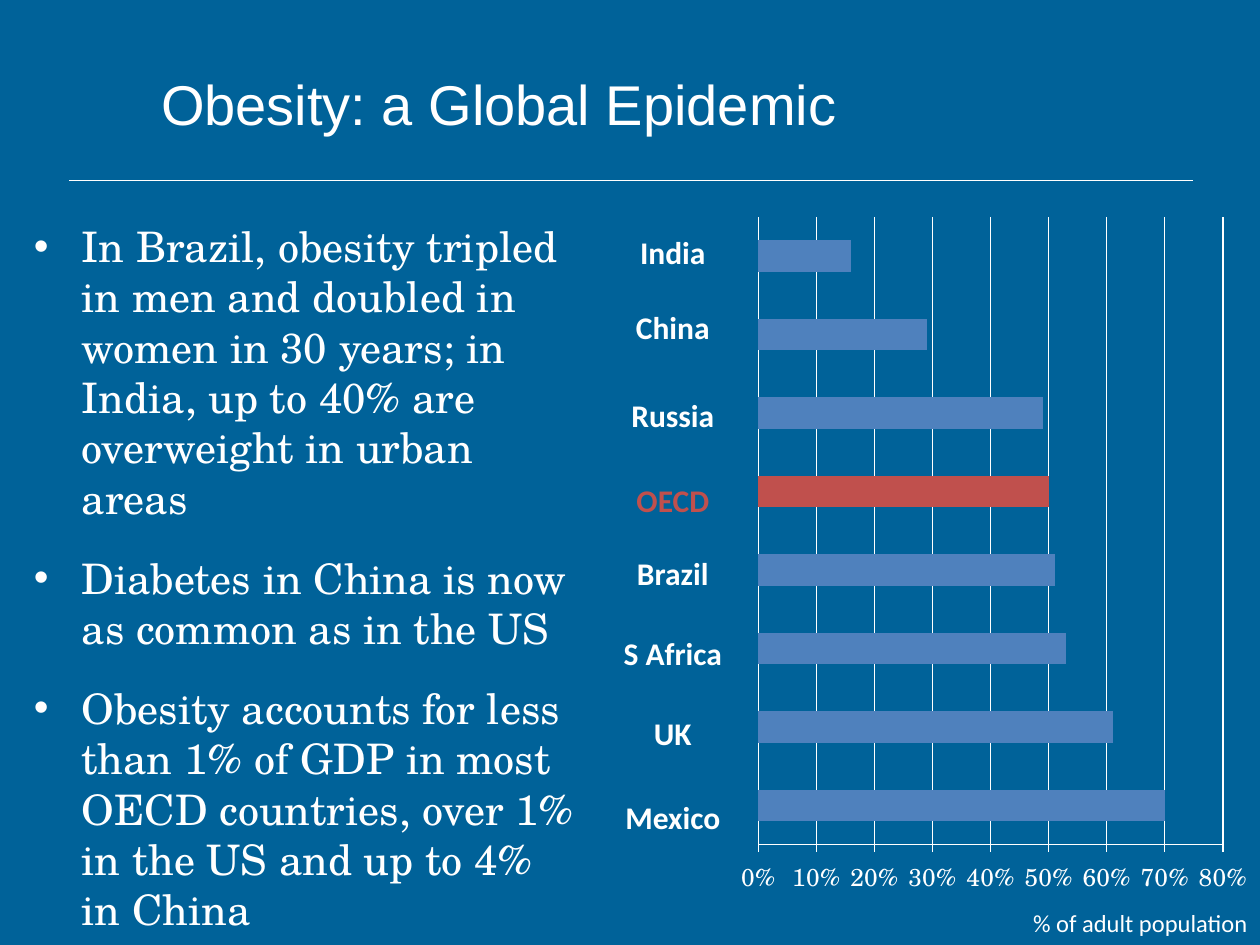
from lxml import etree
from pptx import Presentation
from pptx import util as u
from pptx.chart.data import CategoryChartData
from pptx.dml.color import RGBColor
from pptx.enum import chart as charts, shapes, text
from pptx.oxml import ns

WHITE = RGBColor(0xFF, 0xFF, 0xFF)
BACKGROUND = RGBColor(0x00, 0x62, 0x99)
BLUE = RGBColor(0x4F, 0x81, 0xBD)
RED = RGBColor(0xC0, 0x50, 0x4D)

TITLE = {"name": "Arial", "size": u.Pt(32)}
BODY = {"name": "TeX Gyre Schola", "size": u.Pt(24)}
AXIS = {"name": "TeX Gyre Schola", "size": u.Pt(14)}
LABEL = {"name": "Calibri", "size": u.Pt(18), "bold": True}
CAPTION = {"name": "Calibri", "size": u.Pt(14)}

BULLETS = [
    "In Brazil, obesity tripled in men and doubled in women in 30 years; "
    "in India, up to 40% are overweight in urban areas",
    "Diabetes in China is now as common as in the US",
    "Obesity accounts for less than 1% of GDP in most OECD countries, "
    "over 1% in the US and up to 4% in China",
]
COUNTRIES = [("India", 0.59), ("China", 0.59), ("Russia", 0.82), ("OECD", 0.53),
             ("Brazil", 0.63), ("S Africa", 0.63), ("UK", 0.64), ("Mexico", 0.69)]
RATES = [0.7, 0.61, 0.53, 0.51, 0.5, 0.49, 0.29, 0.16]
OECD_POINT = 4


def inches(*lengths):
    return [u.Inches(length) for length in lengths]


def style_font(font, formats, color=WHITE):
    for name, value in formats.items():
        setattr(font, name, value)
    font.color.rgb = color


def add_element(parent, tag, **attributes):
    return etree.SubElement(parent, ns.qn(tag), attributes)


class SlideBuilder:
    def __init__(self, slide, color):
        self.slide = slide
        self.color = color
        slide.background.fill.solid()
        slide.background.fill.fore_color.rgb = BACKGROUND

    def rule(self, left, top, width):
        line = self.slide.shapes.add_connector(
            shapes.MSO_CONNECTOR.STRAIGHT, *inches(left, top, left + width, top))
        line.line.color.rgb = self.color
        line.line.width = u.Pt(0.5)
        add_element(line._element.spPr, "a:effectLst")

    def text(self, place, paragraphs, formats, align=text.PP_ALIGN.LEFT,
             anchor=text.MSO_ANCHOR.TOP, bullets=False):
        box = self.slide.shapes.add_textbox(*inches(*place))
        frame = box.text_frame
        frame.word_wrap = True
        frame.vertical_anchor = anchor
        for index, words in enumerate(paragraphs):
            para = frame.add_paragraph() if index else frame.paragraphs[0]
            para.text = words
            para.alignment = align
            if bullets:
                para.space_before = u.Pt(4.8 if index else 0)
                para.space_after = u.Pt(12)
                properties = para._p.get_or_add_pPr()
                properties.set("marL", str(u.Inches(0.38)))
                properties.set("indent", str(u.Inches(-0.38)))
                add_element(properties, "a:buFont", typeface="Arial")
                add_element(properties, "a:buChar", char="•")
            style_font(para.font, formats, self.color)

    def labels(self, place, rows, formats, highlight):
        table = self.slide.shapes.add_table(len(rows), 1, *inches(*place)).table
        table.first_row = table.horz_banding = False
        for index, (name, height) in enumerate(rows):
            table.rows[index].height = u.Inches(height)
            cell = table.cell(index, 0)
            cell.text = name
            cell.vertical_anchor = text.MSO_ANCHOR.MIDDLE
            para = cell.text_frame.paragraphs[0]
            para.alignment = text.PP_ALIGN.CENTER
            style_font(para.font, formats, RED if name == highlight else self.color)
            properties = cell._tc.get_or_add_tcPr()
            for side in ("a:lnL", "a:lnR", "a:lnT", "a:lnB"):
                add_element(add_element(properties, side), "a:noFill")
            cell.fill.background()

    def bars(self, place, values, formats, highlight):
        data = CategoryChartData(number_format="0%")
        data.categories = [str(number + 1) for number in range(len(values))]
        data.add_series("Series 1", values)
        chart = self.slide.shapes.add_chart(
            charts.XL_CHART_TYPE.BAR_CLUSTERED, *inches(*place), data).chart
        chart.has_legend = chart.has_title = False
        style_font(chart.font, formats, self.color)
        chart.category_axis.visible = False
        axis = chart.value_axis
        axis.minimum_scale, axis.maximum_scale, axis.major_unit = 0, 0.8, 0.1
        axis.major_tick_mark = charts.XL_TICK_MARK.OUTSIDE
        axis.has_major_gridlines = True
        axis.tick_labels.number_format = "0%"
        axis.tick_labels.number_format_is_linked = False
        for line in (axis.format.line, axis.major_gridlines.format.line):
            line.color.rgb = self.color
            line.width = u.Pt(0.75)
        plot = chart.plots[0]
        plot.gap_width = 150
        plot.vary_by_categories = False
        series = plot.series[0]
        for item, color in ((series, BLUE), (series.points[highlight], RED)):
            item.format.fill.solid()
            item.format.fill.fore_color.rgb = color
        self.fix_plot_area(chart, x="0.05", y="0.02", w="0.88", h="0.89")

    def fix_plot_area(self, chart, **fractions):
        area = chart._chartSpace.chart.plotArea
        for old in area.findall(ns.qn("c:layout")):
            area.remove(old)
        layout = etree.Element(ns.qn("c:layout"))
        area.insert(0, layout)
        manual = add_element(layout, "c:manualLayout")
        add_element(manual, "c:layoutTarget", val="inner")
        for side in ("x", "y"):
            add_element(manual, f"c:{side}Mode", val="edge")
        for side, fraction in fractions.items():
            add_element(manual, f"c:{side}", val=fraction)


def main():
    deck = Presentation()
    deck.slide_width, deck.slide_height = inches(10, 7.5)
    page = SlideBuilder(deck.slides.add_slide(deck.slide_layouts[6]), WHITE)
    page.rule(0.55, 1.43, 8.92)
    page.text((1.18, 0.26, 8.11, 1.12), ["Obesity: a Global Epidemic"], TITLE,
              anchor=text.MSO_ANCHOR.MIDDLE)
    page.labels((4.65, 1.72, 1.38, 5.13), COUNTRIES, LABEL, "OECD")
    page.text((7.95, 7.16, 2.05, 0.34), ["% of adult population"], CAPTION,
              align=text.PP_ALIGN.RIGHT)
    page.bars((5.81, 1.61, 4.19, 5.6), RATES, AXIS, OECD_POINT)
    page.text((0.17, 1.7, 4.49, 5.54), BULLETS, BODY, bullets=True)
    deck.save("out.pptx")


if __name__ == "__main__":
    main()
